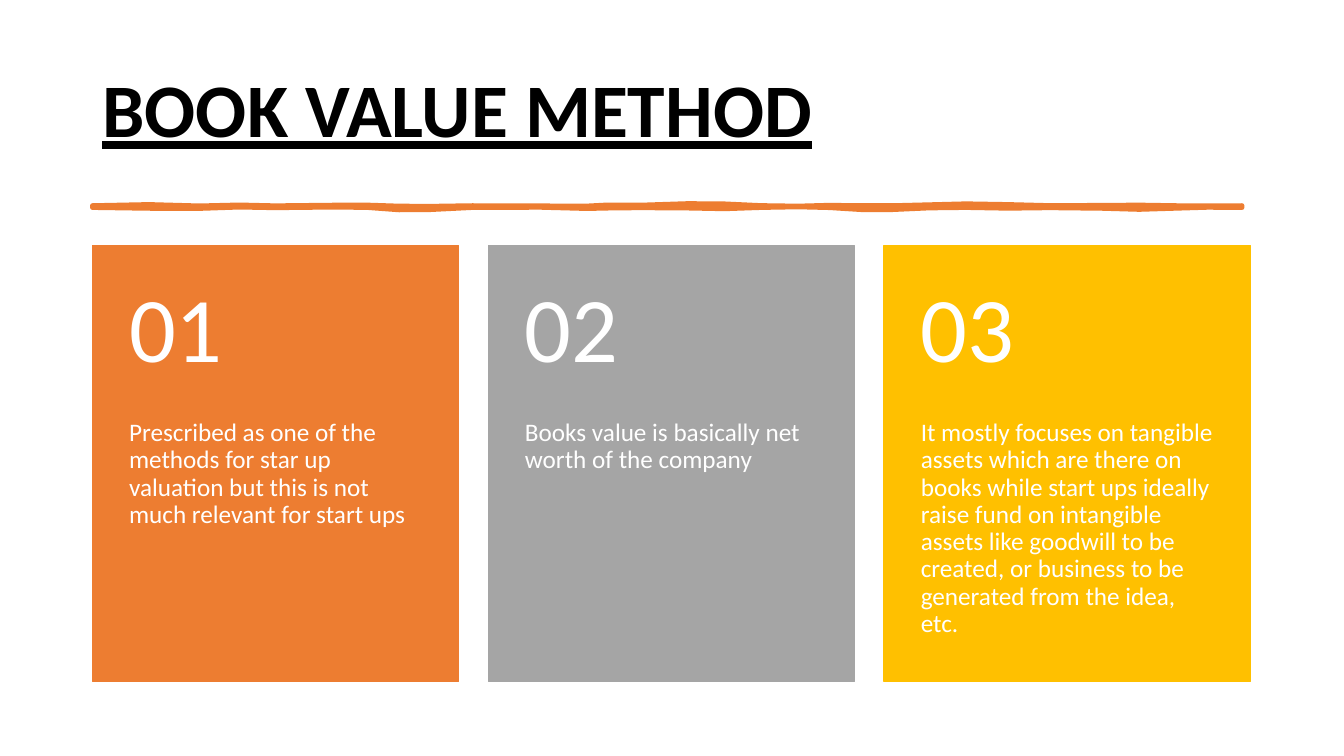
from dataclasses import dataclass
from lxml import etree
from pptx import Presentation
from pptx.dml.color import RGBColor
from pptx.enum.shapes import MSO_SHAPE
from pptx.enum.text import MSO_ANCHOR, MSO_AUTO_SIZE, PP_ALIGN
from pptx.oxml.ns import qn
from pptx.util import Pt

RECT = MSO_SHAPE.RECTANGLE
TOP, MIDDLE = MSO_ANCHOR.TOP, MSO_ANCHOR.MIDDLE
LEFT = PP_ALIGN.LEFT
NO_FIT = MSO_AUTO_SIZE.NONE

TITLE = "BOOK VALUE METHOD"
CARDS = [
    ("01", "ED7D31", "Prescribed as one of the methods for star up valuation "
     "but this is not much relevant for start ups"),
    ("02", "A5A5A5", "Books value is basically net worth of the company"),
    ("03", "FFC000", "It mostly focuses on tangible assets which are there on "
     "books while start ups ideally raise fund on intangible assets like "
     "goodwill to be created, or business to be generated from the idea, etc."),
]
# Brush stroke: x in px, upper and lower edge in tenths of a px
STROKE = [
    (88, 1958, 1978), (142, 1947, 1986), (190, 1960, 1987), (228, 1951, 1974),
    (262, 1959, 1980), (318, 1953, 1974), (350, 1952, 1978), (380, 1962, 2000),
    (410, 1964, 1998), (450, 1958, 1978), (515, 1960, 1976), (560, 1961, 1988),
    (575, 1953, 1984), (610, 1953, 1980), (655, 1938, 1983), (690, 1941, 1990),
    (725, 1957, 1978), (760, 1962, 1972), (790, 1954, 1979), (820, 1958, 1998),
    (850, 1958, 1998), (885, 1949, 1982), (920, 1940, 1978), (960, 1947, 1985),
    (1000, 1957, 1980), (1050, 1955, 1986), (1085, 1952, 1996),
    (1120, 1958, 1985), (1150, 1960, 1976), (1183, 1958, 1978),
]


@dataclass
class Theme:
    font: str = "Calibri"
    ink: str = "000000"
    paper: str = "FFFFFF"
    accent: str = "ED7D31"
    title: int = 54
    number: int = 66
    body: int = 18
    spacing: float = 0.9


theme = Theme()
PX = 9525
WIDTH, HEIGHT = 1280, 720
EDGE, CARD_TOP, CARD_W, CARD_H, GAP = 88, 234, 349, 415, 28
HEAD_H, PAD, HALF_PAD = 166, 35, 17


def px(*lengths):
    return [n * PX for n in lengths]


def paint(shape, color, weight):
    shape.shadow.inherit = False
    shape.fill.solid()
    shape.fill.fore_color.rgb = RGBColor.from_string(color)
    shape.line.color.rgb = RGBColor.from_string(color)
    shape.line.width = Pt(weight)


def write(shape, text, size, color, anchor, pads=None, **style):
    """Fill a text shape; pads are left, top, right and bottom in px."""
    frame = shape.text_frame
    frame.text = text
    form = {"word_wrap": True, "auto_size": NO_FIT, "vertical_anchor": anchor}
    if pads:
        sides = ("left", "top", "right", "bottom")
        form.update({f"margin_{s}": n for s, n in zip(sides, px(*pads))})
    for name, value in form.items():
        setattr(frame, name, value)
    para = frame.paragraphs[0]
    para.alignment = LEFT
    para.line_spacing = theme.spacing
    font = para.runs[0].font
    for name, value in {"name": theme.font, "size": Pt(size), **style}.items():
        setattr(font, name, value)
    font.color.rgb = RGBColor.from_string(color)


def draw_stroke(slide):
    upper = [(x, top) for x, top, _ in STROKE]
    lower = [(x, low) for x, _, low in reversed(STROKE)]
    path = slide.shapes.build_freeform(*upper[0], scale=(PX, PX / 10))
    path.add_line_segments(upper[1:] + lower, close=True)
    shape = path.convert_to_shape()
    paint(shape, theme.accent, 3.25)
    etree.SubElement(shape.line._get_or_add_ln(), qn("a:round"))


def draw_card(slide, left, number, color, text):
    shapes = slide.shapes
    card = shapes.add_shape(RECT, *px(left, CARD_TOP, CARD_W, CARD_H))
    paint(card, color, 1)
    body = shapes.add_textbox(
        *px(left, CARD_TOP + HEAD_H, CARD_W, CARD_H - HEAD_H))
    write(body, text, theme.body, theme.paper, TOP, (PAD, 0, PAD, PAD))
    head = shapes.add_textbox(*px(left, CARD_TOP, CARD_W, HEAD_H))
    write(head, number, theme.number, theme.paper, MIDDLE,
          (PAD, HALF_PAD, PAD, HALF_PAD))


def main():
    deck = Presentation()
    deck.slide_width, deck.slide_height = px(WIDTH, HEIGHT)
    slide = deck.slides.add_slide(deck.slide_layouts[5])
    title = slide.shapes.title
    title.left, title.top, title.width, title.height = px(EDGE, 38, 1104, 139)
    write(title, TITLE, theme.title, theme.ink, MIDDLE,
          bold=True, underline=True)
    draw_stroke(slide)
    for i, card in enumerate(CARDS):
        draw_card(slide, EDGE + i * (CARD_W + GAP), *card)
    deck.save("out.pptx")


if __name__ == "__main__":
    main()
